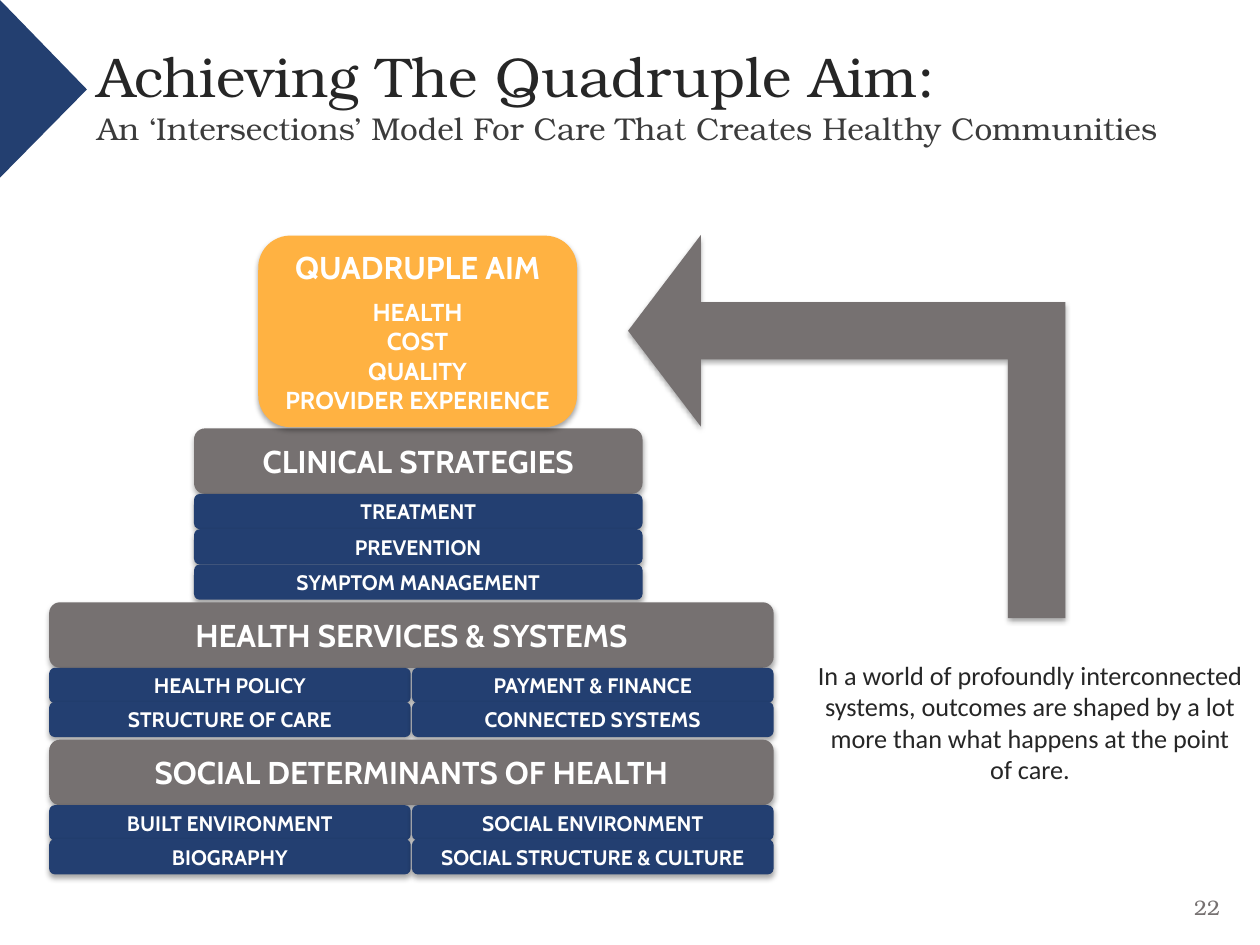
from pptx import Presentation
from pptx.dml.color import RGBColor
from pptx.enum.shapes import MSO_SHAPE
from pptx.enum.text import MSO_ANCHOR, MSO_AUTO_SIZE, PP_ALIGN
from pptx.oxml import parse_xml
from pptx.oxml.ns import nsdecls
from pptx.util import Pt

SCALE = 9144
COLORS = {
    "navy": "233F71",
    "edge": "233F70",
    "gray": "767171",
    "amber": "FFB242",
    "white": "FFFFFF",
    "ink": "262626",
    "soft": "3C3C3C",
}
TITLE = {"name": "TeX Gyre Bonum", "size": 32, "color": "ink"}
SUBTITLE = {**TITLE, "size": 18, "color": "soft"}
NUMBER = {**TITLE, "size": 12, "color": "gray"}
HEADING = {"name": "Cabin", "size": 18, "bold": True, "color": "white"}
AIM = {**HEADING, "size": 14}
ITEM = {**HEADING, "size": 12}
CAPTION = {"name": "Calibri", "size": 15, "color": "ink"}

SECTIONS = [
    ("CLINICAL STRATEGIES", 154, 340, 356, 28,
     [["TREATMENT", "PREVENTION", "SYMPTOM MANAGEMENT"]]),
    ("HEALTH SERVICES & SYSTEMS", 39, 478, 575, 27,
     [["HEALTH POLICY", "STRUCTURE OF CARE"],
      ["PAYMENT & FINANCE", "CONNECTED SYSTEMS"]]),
    ("SOCIAL DETERMINANTS OF HEALTH", 39, 587, 575, 27,
     [["BUILT ENVIRONMENT", "BIOGRAPHY"],
      ["SOCIAL ENVIRONMENT", "SOCIAL STRUCTURE & CULTURE"]]),
]
HEADING_HEIGHT = 52
ITEM_HEIGHT = 28


class SlideBuilder:
    def __init__(self, deck):
        self.page = deck.slides.add_slide(deck.slide_layouts[5])

    def paint(self, shape, color):
        shape.fill.solid()
        shape.fill.fore_color.rgb = RGBColor.from_string(COLORS[color])
        shape.line.fill.background()
        shape.shadow.inherit = False

    def cast_shadow(self, shape):
        effects = shape._element.spPr.find(
            "{http://schemas.openxmlformats.org/drawingml/2006/main}effectLst")
        effects.append(parse_xml(
            f'<a:outerShdw {nsdecls("a")} blurRad="40000" dist="23000" '
            'dir="5400000" rotWithShape="0"><a:srgbClr val="000000">'
            '<a:alpha val="35000"/></a:srgbClr></a:outerShdw>'))

    def frame(self, shape, margins=(0, 0, 0, 0), anchor=MSO_ANCHOR.MIDDLE):
        frame = shape.text_frame
        left, top, right, bottom = (margin * SCALE for margin in margins)
        values = {
            "word_wrap": True, "auto_size": MSO_AUTO_SIZE.NONE,
            "vertical_anchor": anchor, "margin_left": left,
            "margin_top": top, "margin_right": right, "margin_bottom": bottom,
        }
        for key, value in values.items():
            setattr(frame, key, value)
        return frame

    def span(self, para, text, style):
        span = para.add_run()
        span.text = text
        for key, value in style.items():
            if key == "color":
                span.font.color.rgb = RGBColor.from_string(COLORS[value])
            else:
                setattr(span.font, key, Pt(value) if key == "size" else value)

    def paragraphs(self, frame, lines, gap=0):
        for index, (text, style) in enumerate(lines):
            para = frame.add_paragraph() if index else frame.paragraphs[0]
            para.alignment = PP_ALIGN.CENTER
            if index == 1:
                para.space_before = Pt(gap)
            self.span(para, text, style)

    def title(self, bounds, heading, subheading):
        title = self.page.shapes.title
        for key, value in zip(("left", "top", "width", "height"), bounds):
            setattr(title, key, value * SCALE)
        para = self.frame(title, (0, 5, 0, 0)).paragraphs[0]
        para.alignment = PP_ALIGN.LEFT
        self.span(para, heading, TITLE)
        para.add_line_break()
        self.span(para, subheading, SUBTITLE)

    def shape(self, kind, bounds, color):
        shape = self.page.shapes.add_shape(
            kind, *(length * SCALE for length in bounds))
        self.paint(shape, color)
        self.cast_shadow(shape)
        return shape

    def block(self, bounds, color, lines, gap=0):
        box = self.shape(MSO_SHAPE.ROUNDED_RECTANGLE, bounds, color)
        self.paragraphs(self.frame(box), lines, gap)

    def arrow(self, bounds, adjustments):
        arrow = self.shape(MSO_SHAPE.BENT_UP_ARROW, bounds, "gray")
        arrow.rotation = 270
        for index, value in enumerate(adjustments):
            arrow.adjustments[index] = value

    def outline(self, start, points, color):
        builder = self.page.shapes.build_freeform(*start, scale=SCALE)
        builder.add_line_segments(points, close=True)
        self.paint(builder.convert_to_shape(), color)

    def text(self, bounds, text, style, margins, anchor):
        box = self.page.shapes.add_textbox(
            *(length * SCALE for length in bounds))
        self.paragraphs(self.frame(box, margins, anchor), [(text, style)])

    def section(self, heading, left, top, width, pitch, columns):
        self.block((left, top, width, HEADING_HEIGHT), "gray",
                   [(heading, HEADING)])
        column_width = width // len(columns)
        for column, items in enumerate(columns):
            for row, item in enumerate(items):
                bounds = (left + column * (column_width + 1),
                          top + HEADING_HEIGHT + row * pitch,
                          column_width, ITEM_HEIGHT)
                self.block(bounds, "navy", [(item, ITEM)])


def main():
    deck = Presentation()
    deck.slide_width = 1000 * SCALE
    deck.slide_height = 750 * SCALE
    slide = SlideBuilder(deck)
    slide.outline((0, 0), [(69, 71), (0, 141)], "edge")
    slide.title((77, 15, 873, 114), "Achieving The Quadruple Aim:",
                "An ‘Intersections’ Model For Care That Creates Healthy Communities")
    for section in SECTIONS:
        slide.section(*section)
    aims = ["HEALTH", "COST", "QUALITY", "PROVIDER EXPERIENCE"]
    slide.block((205, 187, 253, 152), "amber",
                [("QUADRUPLE AIM", HEADING)] + [(aim, AIM) for aim in aims],
                gap=6)
    slide.text((644, 518, 347, 136),
               "In a world of profoundly interconnected systems, outcomes are "
               "shaped by a lot more than what happens at the point of care.",
               CAPTION, (5, 5, 5, 5), MSO_ANCHOR.TOP)
    slide.arrow((520, 165, 304, 347), (0.15, 0.25, 0.19))
    slide.text((933, 700, 50, 40), "22", NUMBER, (5, 5, 5, 5),
               MSO_ANCHOR.MIDDLE)
    deck.save("out.pptx")


if __name__ == "__main__":
    main()
